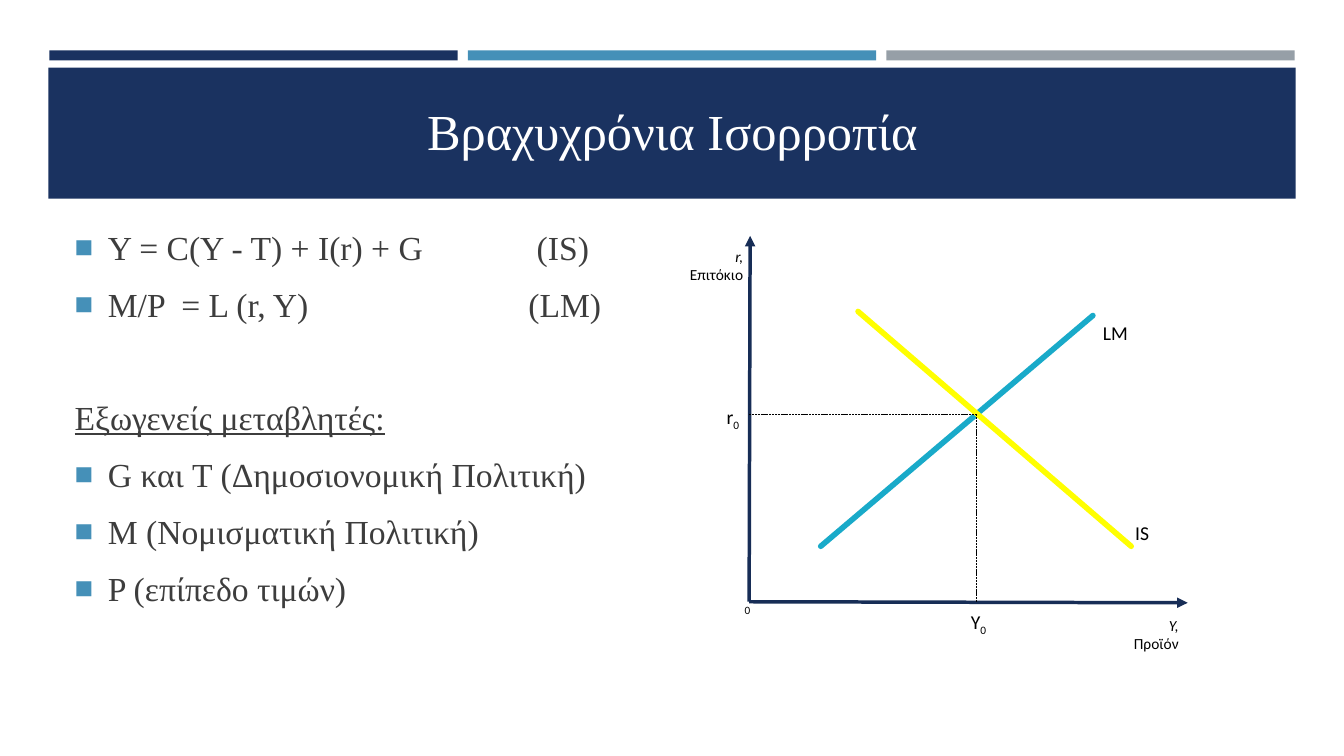
from dataclasses import dataclass

import pptx
import pptx.dml.color
import pptx.enum.dml
import pptx.enum.shapes
import pptx.enum.text
import pptx.oxml
import pptx.oxml.ns
import pptx.util


@dataclass(frozen=True)
class Theme:
    navy: str = "1A3260"
    blue: str = "4590B8"
    gray: str = "969FA7"
    white: str = "FFFFFF"
    black: str = "000000"
    body_text: str = "3D3D3D"
    axis: str = "172D56"
    lm: str = "19AAC9"
    investment_saving: str = "FFFF00"
    text_font: str = "Times New Roman"
    chart_font: str = "Calibri"
    title_size: int = 36
    body_size: int = 24
    curve_size: int = 14
    axis_size: int = 11
    origin_size: int = 8


THEME = Theme()
PX = 9144
SLIDE_SIZE = (1333, 750)

TITLE = "Βραχυχρόνια Ισορροπία"
TITLE_BOX = (64, 74, 1206, 111)
BAND_BOX = (48, 67, 1237, 130)
STRIPE_COLORS = (THEME.navy, THEME.blue, THEME.gray)
STRIPE_BOX = (49, 50, 405, 10)
STRIPE_STEP = 415

BODY_BOX = (64, 213, 552, 428)
BODY_TOP_MARGIN = 12
BODY_INDENT = 33
TAB_STOP = 450
HEADING_GAP = 40
BODY = [
    ("bullet", "Y = C(Y - T) + I(r) + G\t (IS)"),
    ("bullet", "M/P  = L (r, Y)\t(LM)"),
    ("heading", "Εξωγενείς μεταβλητές:"),
    ("bullet", "G και T (Δημοσιονομική Πολιτική)"),
    ("bullet", "M (Νομισματική Πολιτική)"),
    ("bullet", "P (επίπεδο τιμών)"),
]

ORIGIN = (743, 597)
EQUILIBRIUM = (968, 411)
LINES = [
    ((744, 234), ORIGIN, THEME.axis, 2.5, "arrow"),
    ((1178, 598), ORIGIN, THEME.axis, 2.5, "arrow"),
    ((814, 542), (1084, 313), THEME.lm, 4, "round"),
    ((851, 309), (1122, 542), THEME.investment_saving, 4, "round"),
    ((ORIGIN[0], EQUILIBRIUM[1]), EQUILIBRIUM, THEME.black, 0.5, "dash"),
    (EQUILIBRIUM, (EQUILIBRIUM[0], ORIGIN[1]), THEME.black, 0.5, "dash"),
]
LABELS = [
    ((1116, 512, 56, 34), THEME.curve_size, "LEFT", [[("IS", "")]]),
    ((1084, 313, 57, 34), THEME.curve_size, "LEFT", [[("LM", "")]]),
    ((667, 240, 80, 47), THEME.axis_size, "RIGHT", [[("r,", "italic")], [("Επιτόκιο", "")]]),
    ((1108, 606, 71, 47), THEME.axis_size, "RIGHT", [[("Y, ", "italic"), ("Προϊόν", "")]]),
    ((721, 594, 33, 24), THEME.origin_size, "RIGHT", [[("0", "")]]),
    ((707, 397, 36, 34), THEME.curve_size, "RIGHT", [[("r", ""), ("0", "subscript")]]),
    ((945, 600, 51, 34), THEME.curve_size, "CENTER", [[("Y", ""), ("0", "subscript")]]),
]


def emu(values):
    return [value * PX for value in values]


def rgb(color):
    return pptx.dml.color.RGBColor.from_string(color)


def append_xml(parent, tag, content="", **attributes):
    attribute_text = "".join(f' {key}="{value}"' for key, value in attributes.items())
    namespace = pptx.oxml.ns.nsdecls("a")
    parent.append(pptx.oxml.parse_xml(f"<a:{tag} {namespace}{attribute_text}>{content}</a:{tag}>"))


def add_run(paragraph, text, font, size, color):
    run = paragraph.add_run()
    run.text = text
    run.font.name = font
    run.font.size = pptx.util.Pt(size)
    run.font.color.rgb = rgb(color)
    return run


def place(shape, box):
    shape.left, shape.top, shape.width, shape.height = emu(box)


def add_backdrop(slide):
    left, top, width, height = STRIPE_BOX
    rectangles = [
        ((left + index * STRIPE_STEP, top, width, height), color)
        for index, color in enumerate(STRIPE_COLORS)
    ]
    rectangles.append((BAND_BOX, THEME.navy))
    for box, color in rectangles:
        shape = slide.shapes.add_shape(pptx.enum.shapes.MSO_SHAPE.RECTANGLE, *emu(box))
        shape.shadow.inherit = False
        shape.fill.solid()
        shape.fill.fore_color.rgb = rgb(color)
        shape.line.fill.background()
        slide.shapes.title._element.addprevious(shape._element)


def fill_title(shape):
    place(shape, TITLE_BOX)
    frame = shape.text_frame
    frame.vertical_anchor = pptx.enum.text.MSO_ANCHOR.MIDDLE
    paragraph = frame.paragraphs[0]
    paragraph.alignment = pptx.enum.text.PP_ALIGN.CENTER
    add_run(paragraph, TITLE, THEME.text_font, THEME.title_size, THEME.white)


def fill_body(shape):
    place(shape, BODY_BOX)
    frame = shape.text_frame
    frame.vertical_anchor = pptx.enum.text.MSO_ANCHOR.TOP
    frame.margin_top = BODY_TOP_MARGIN * PX
    for index, (kind, text) in enumerate(BODY):
        paragraph = frame.add_paragraph() if index else frame.paragraphs[0]
        paragraph.space_before = pptx.util.Pt(HEADING_GAP if kind == "heading" else 0)
        paragraph.space_after = pptx.util.Pt(12)
        run = add_run(paragraph, text, THEME.text_font, THEME.body_size, THEME.body_text)
        properties = paragraph._p.get_or_add_pPr()
        indent = BODY_INDENT * PX if kind == "bullet" else 0
        properties.set("marL", str(indent))
        properties.set("indent", str(-indent))
        if kind == "heading":
            run.font.underline = True
            append_xml(properties, "buNone")
            continue
        append_xml(properties, "buClr", f'<a:srgbClr val="{THEME.blue}"/>')
        append_xml(properties, "buSzPct", val=92000)
        append_xml(properties, "buFont", typeface=THEME.text_font)
        append_xml(properties, "buChar", char="■")
        if "\t" in text:
            append_xml(properties, "tabLst", f'<a:tab pos="{TAB_STOP * PX}" algn="l"/>')


def add_line(slide, start, end, color, width, style):
    connector = slide.shapes.add_connector(
        pptx.enum.shapes.MSO_CONNECTOR.STRAIGHT, *emu(start + end)
    )
    connector.line.color.rgb = rgb(color)
    connector.line.width = pptx.util.Pt(width)
    outline = connector.line._get_or_add_ln()
    if style == "dash":
        connector.line.dash_style = pptx.enum.dml.MSO_LINE.SQUARE_DOT
    elif style == "round":
        outline.set("cap", "rnd")
    else:
        append_xml(outline, "headEnd", type="triangle")
    append_xml(connector._element.spPr, "effectLst")


def add_label(slide, box, size, alignment, paragraphs):
    frame = slide.shapes.add_textbox(*emu(box)).text_frame
    frame.word_wrap = True
    for index, runs in enumerate(paragraphs):
        paragraph = frame.add_paragraph() if index else frame.paragraphs[0]
        paragraph.alignment = pptx.enum.text.PP_ALIGN[alignment]
        for text, style in runs:
            run = add_run(paragraph, text, THEME.chart_font, size, THEME.black)
            if style == "italic":
                run.font.italic = True
            elif style == "subscript":
                run.font._element.set("baseline", "-25000")


def main():
    presentation = pptx.Presentation()
    presentation.slide_width, presentation.slide_height = emu(SLIDE_SIZE)
    slide = presentation.slides.add_slide(presentation.slide_layouts[1])
    add_backdrop(slide)
    fill_title(slide.shapes.title)
    fill_body(slide.placeholders[1])
    for line in LINES:
        add_line(slide, *line)
    for label in LABELS:
        add_label(slide, *label)
    presentation.save("out.pptx")


if __name__ == "__main__":
    main()
